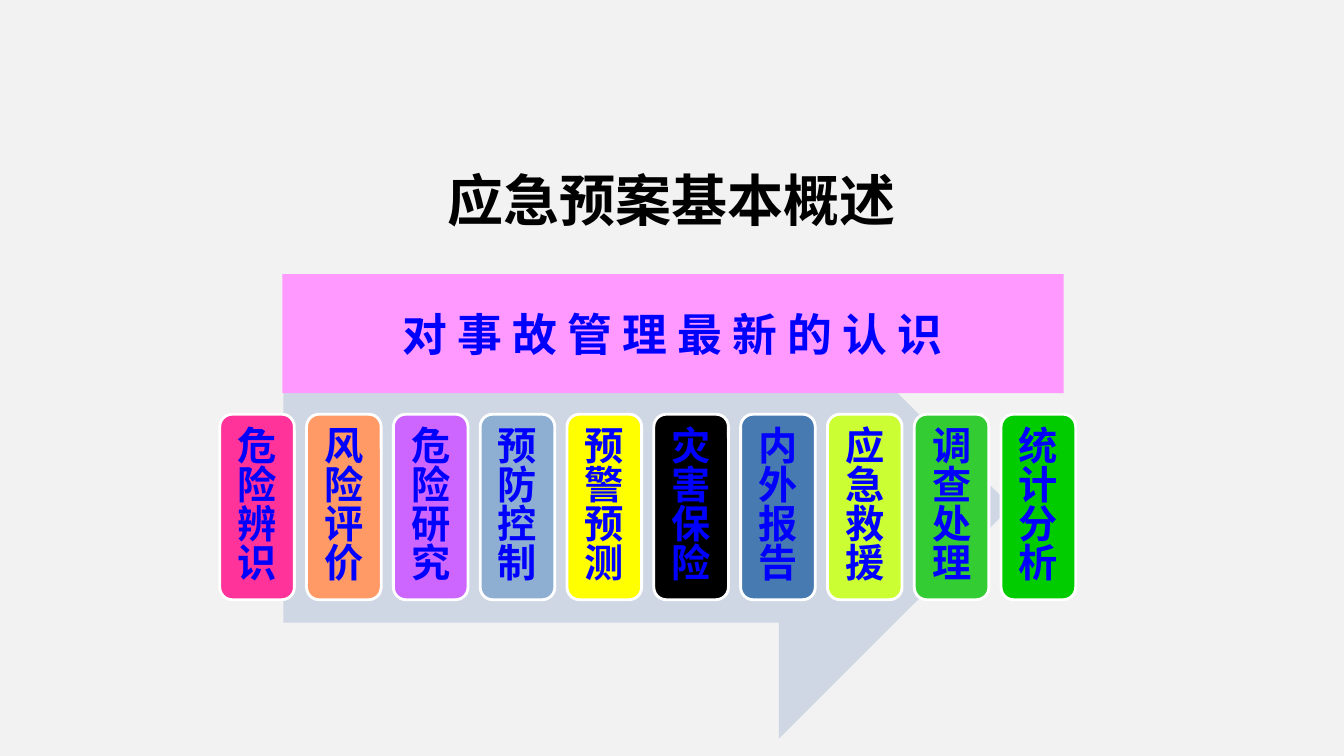
from lxml import etree
from pptx import Presentation
from pptx.dml.color import RGBColor
from pptx.enum.shapes import MSO_SHAPE
from pptx.enum.text import MSO_ANCHOR, MSO_AUTO_SIZE, PP_ALIGN
from pptx.oxml.ns import qn
from pptx.util import Inches, Pt

ARROW = MSO_SHAPE.RIGHT_ARROW
ROUND = MSO_SHAPE.ROUNDED_RECTANGLE
RECT = MSO_SHAPE.RECTANGLE
MIDDLE = MSO_ANCHOR.MIDDLE
CENTER = PP_ALIGN.CENTER
NO_FIT = MSO_AUTO_SIZE.NONE

FONT = "Noto Sans CJK SC"
GRAY = RGBColor(0xF2, 0xF2, 0xF2)
PALE = RGBColor(0xCF, 0xD7, 0xE4)
PINK = RGBColor(0xFF, 0x99, 0xFF)
BLUE = RGBColor(0x00, 0x00, 0xFF)
BLACK = RGBColor(0x00, 0x00, 0x00)
WHITE = RGBColor(0xFF, 0xFF, 0xFF)

STEPS = [
    ("危险辨识", RGBColor(0xFF, 0x33, 0x99)),
    ("风险评价", RGBColor(0xFF, 0x99, 0x66)),
    ("危险研究", RGBColor(0xCC, 0x66, 0xFF)),
    ("预防控制", RGBColor(0x8F, 0xAF, 0xD2)),
    ("预警预测", RGBColor(0xFF, 0xFF, 0x00)),
    ("灾害保险", BLACK),
    ("内外报告", RGBColor(0x47, 0x7A, 0xB1)),
    ("应急救援", RGBColor(0xCC, 0xFF, 0x33)),
    ("调查处理", RGBColor(0x33, 0xCC, 0x33)),
    ("统计分析", RGBColor(0x00, 0xCC, 0x00)),
]
LEFT, PITCH = 2.18, 0.861


def write(shape, text, size, color=BLUE, inset=0.1, spacing=1.0):
    frame = shape.text_frame
    frame.word_wrap = True
    frame.auto_size = NO_FIT
    frame.vertical_anchor = MIDDLE
    frame.margin_left = frame.margin_right = Inches(inset)
    frame.margin_top = frame.margin_bottom = Inches(0.05)
    para = frame.paragraphs[0]
    para.alignment = CENTER
    para.line_spacing = spacing
    para.space_before = Pt(0)
    run = para.add_run()
    run.text = text
    font = run.font
    font.size = Pt(size)
    font.bold = True
    font.color.rgb = color
    font.name = FONT
    east = etree.SubElement(run._r.get_or_add_rPr(), qn("a:ea"))
    east.set("typeface", FONT)


class Deck:
    def __init__(self):
        self.file = Presentation()
        self.file.slide_width = Inches(13.33)
        self.file.slide_height = Inches(7.5)
        self.slide = self.file.slides.add_slide(self.file.slide_layouts[5])
        fill = self.slide.background.fill
        fill.solid()
        fill.fore_color.rgb = GRAY

    def title(self, text, x, y, w, h):
        shape = self.slide.shapes.title
        shape.left, shape.top = Inches(x), Inches(y)
        shape.width, shape.height = Inches(w), Inches(h)
        write(shape, text, 40, color=BLACK)

    def shape(self, kind, x, y, w, h, fill, line=None):
        shape = self.slide.shapes.add_shape(
            kind, Inches(x), Inches(y), Inches(w), Inches(h))
        shape.shadow.inherit = False
        shape.fill.solid()
        shape.fill.fore_color.rgb = fill
        if line is None:
            shape.line.fill.background()
        else:
            shape.line.color.rgb = line
            shape.line.width = Pt(2)
        return shape


def main():
    deck = Deck()
    deck.title("应急预案基本概述", 4.2, 1.52, 4.92, 0.91)
    deck.shape(ARROW, 2.81, 2.72, 7.22, 4.61, PALE)
    for i, (text, fill) in enumerate(STEPS):
        card = deck.shape(ROUND, LEFT + i * PITCH, 4.11, 0.74, 1.84, fill, WHITE)
        write(card, text, 28, inset=0.06, spacing=0.83)
    banner = deck.shape(RECT, 2.8, 2.72, 7.75, 1.18, PINK)
    write(banner, "对 事 故 管 理 最 新 的 认 识", 32)
    deck.file.save("out.pptx")


if __name__ == "__main__":
    main()
